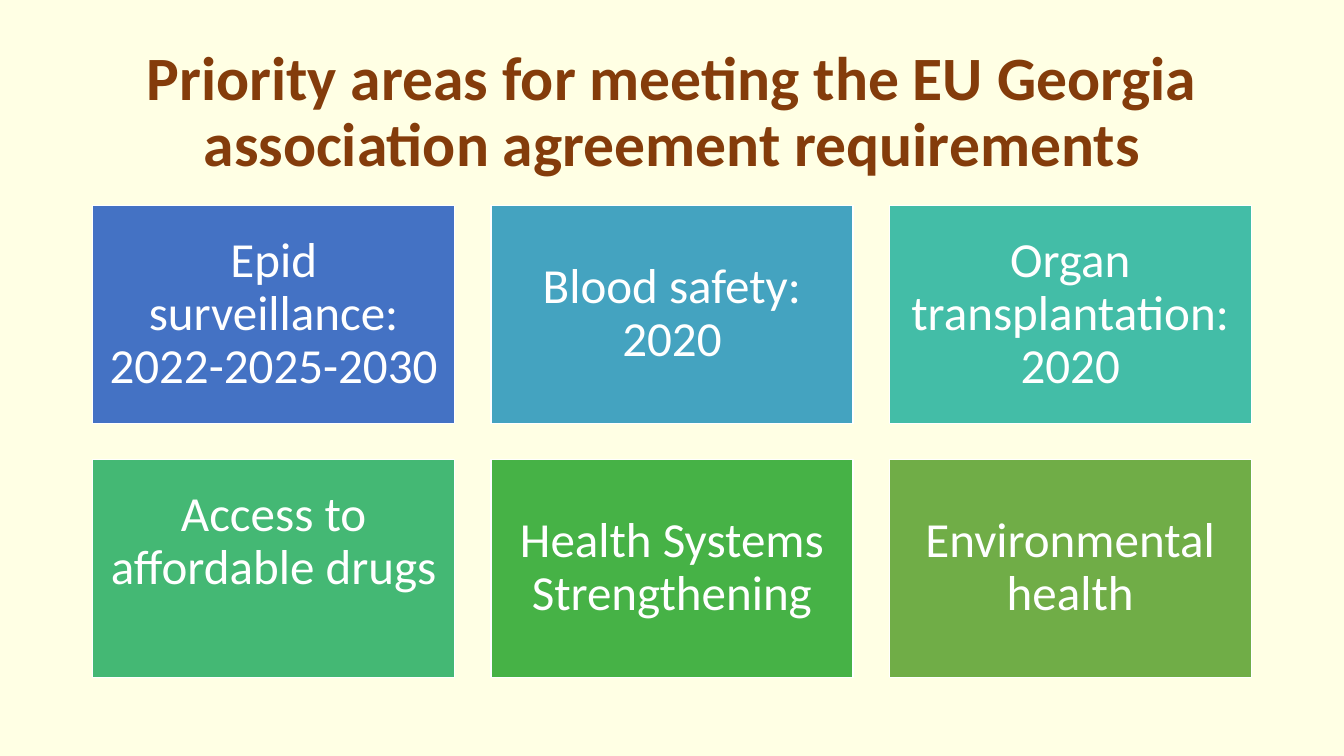
"""Build the slide of priority areas for the association agreement."""
from dataclasses import dataclass

from pptx import Presentation
from pptx.dml.color import RGBColor
from pptx.enum.shapes import MSO_SHAPE
from pptx.enum.text import MSO_ANCHOR, PP_ALIGN
from pptx.slide import Slide
from pptx.text.text import TextFrame
from pptx.util import Inches, Pt

CREAM = RGBColor(0xFF, 0xFF, 0xE4)
BROWN = RGBColor(0x84, 0x3C, 0x0B)
WHITE = RGBColor(0xFF, 0xFF, 0xFF)
BLUE = RGBColor(0x44, 0x72, 0xC4)
SKY = RGBColor(0x44, 0xA3, 0xC0)
TEAL = RGBColor(0x43, 0xBD, 0xA7)
MINT = RGBColor(0x44, 0xB8, 0x74)
GREEN = RGBColor(0x46, 0xB2, 0x46)
OLIVE = RGBColor(0x70, 0xAD, 0x47)

LEFT, TOP = 0.92, 2.04
TILE_WIDTH, TILE_HEIGHT = 3.59, 2.16
GAP = 0.36
COLUMNS = 3
INSET = 0.15
TITLE = "Priority areas for meeting the EU Georgia association agreement requirements"


@dataclass(frozen=True)
class Area:
    text: str
    fill: RGBColor
    bottom_inset: float = INSET


AREAS = [
    Area("Epid surveillance: 2022-2025-2030", BLUE),
    Area("Blood safety: 2020", SKY),
    Area("Organ transplantation: 2020", TEAL),
    Area("Access to affordable drugs", MINT, bottom_inset=0.68),
    Area("Health Systems Strengthening", GREEN),
    Area("Environmental health", OLIVE),
]


def set_all(target: object, values: dict[str, object]) -> None:
    for name, value in values.items():
        setattr(target, name, value)


def write_text(frame: TextFrame, text: str, size: int, color: RGBColor, bold: bool) -> None:
    set_all(frame, {"word_wrap": True, "vertical_anchor": MSO_ANCHOR.MIDDLE})
    para = frame.paragraphs[0]
    set_all(para, {"alignment": PP_ALIGN.CENTER, "line_spacing": 0.9})
    span = para.add_run()
    span.text = text
    set_all(span.font, {"name": "Calibri", "size": Pt(size), "bold": bold})
    span.font.color.rgb = color


def add_title(page: Slide) -> None:
    box = page.shapes.add_textbox(Inches(LEFT), Inches(0.4), Inches(11.5), Inches(1.45))
    write_text(box.text_frame, TITLE, 44, BROWN, True)


def add_tile(page: Slide, area: Area, row: int, column: int) -> None:
    tile = page.shapes.add_shape(
        MSO_SHAPE.RECTANGLE,
        Inches(LEFT + column * (TILE_WIDTH + GAP)),
        Inches(TOP + row * (TILE_HEIGHT + GAP)),
        Inches(TILE_WIDTH),
        Inches(TILE_HEIGHT),
    )
    tile.shadow.inherit = False
    tile.fill.solid()
    tile.fill.fore_color.rgb = area.fill
    tile.line.color.rgb = WHITE
    tile.line.width = Pt(1)
    set_all(tile.text_frame, {
        "margin_left": Inches(INSET),
        "margin_top": Inches(INSET),
        "margin_right": Inches(INSET),
        "margin_bottom": Inches(area.bottom_inset),
    })
    write_text(tile.text_frame, area.text, 35, WHITE, False)


def main() -> None:
    deck = Presentation()
    set_all(deck, {"slide_width": Inches(13.33), "slide_height": Inches(7.5)})
    page = deck.slides.add_slide(deck.slide_layouts[6])
    page.background.fill.solid()
    page.background.fill.fore_color.rgb = CREAM
    add_title(page)
    for index, area in enumerate(AREAS):
        add_tile(page, area, *divmod(index, COLUMNS))
    deck.save("out.pptx")


if __name__ == "__main__":
    main()
